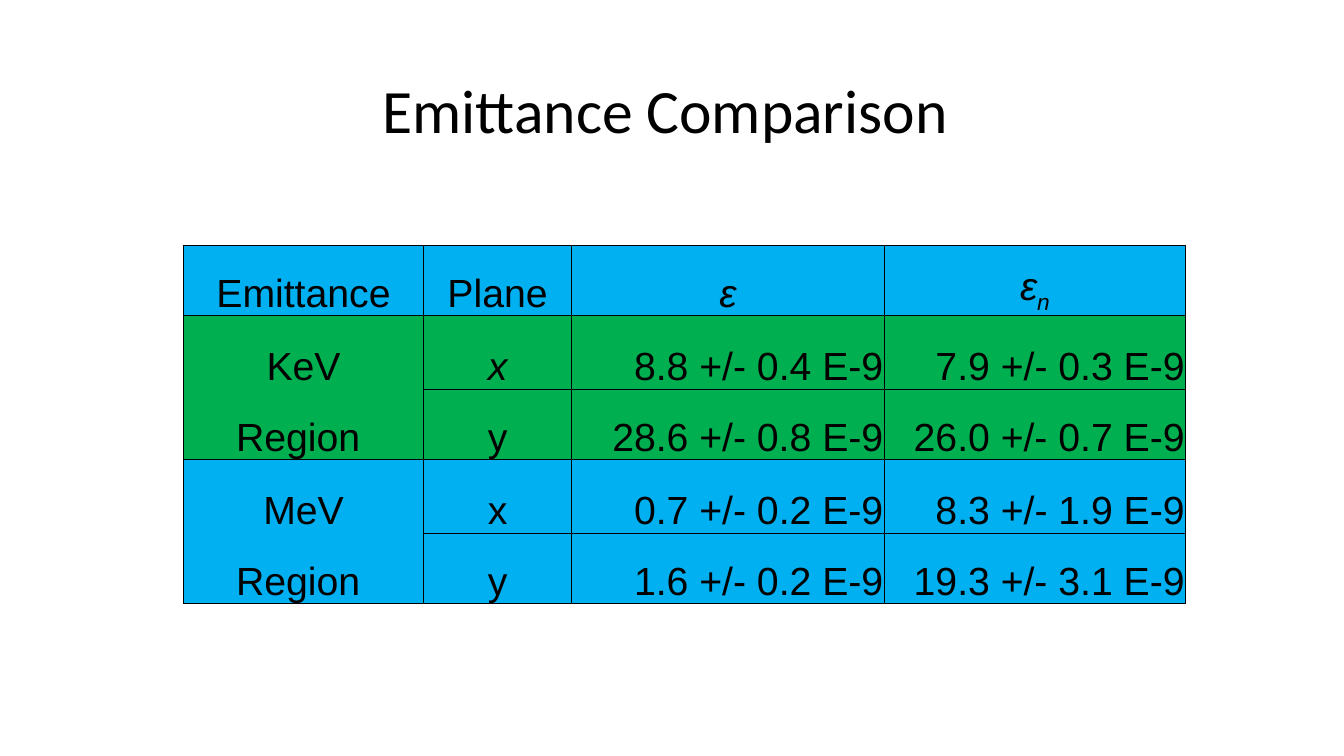
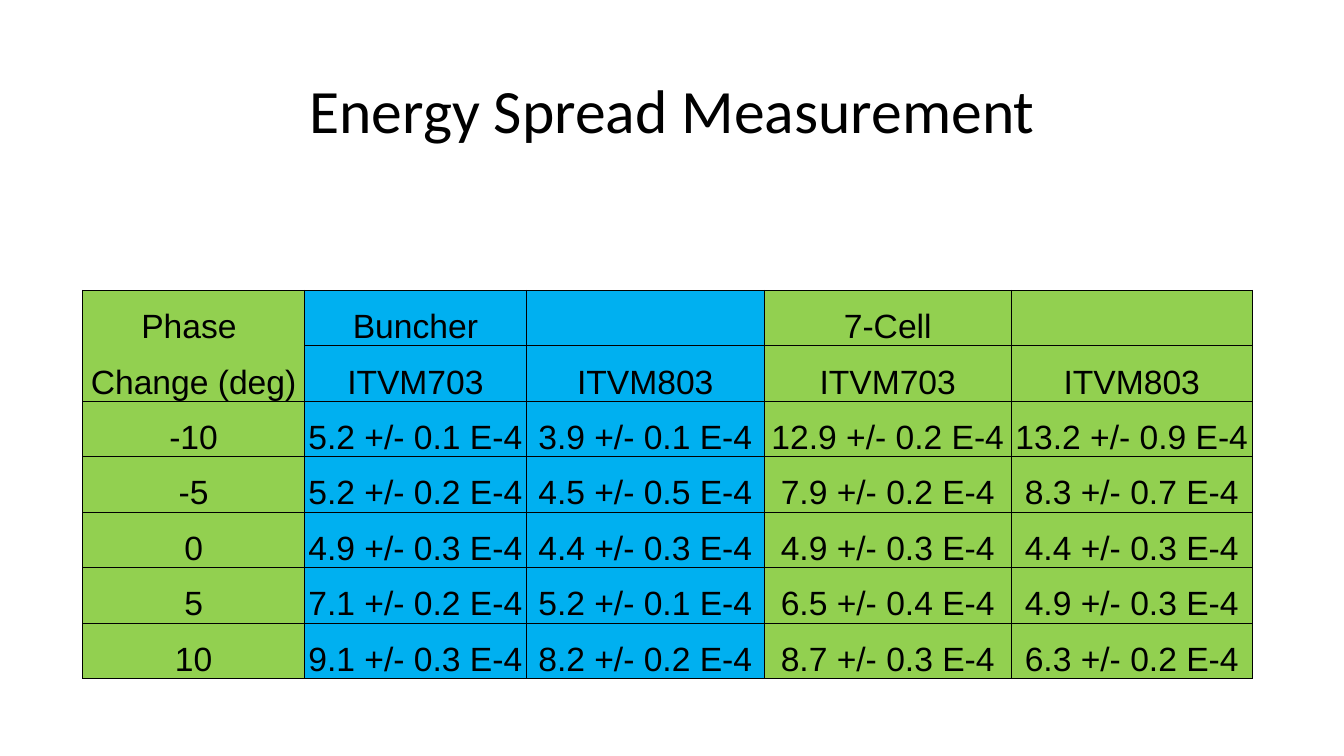
"""Build two slides that compare beam emittance and energy spread in tables."""
from lxml import etree
from pptx import Presentation
from pptx.dml.color import RGBColor
from pptx.enum.text import MSO_ANCHOR, PP_ALIGN
from pptx.oxml.ns import qn
from pptx.util import Inches, Pt

CENTER, RIGHT = PP_ALIGN.CENTER, PP_ALIGN.RIGHT
MIDDLE, BOTTOM = MSO_ANCHOR.MIDDLE, MSO_ANCHOR.BOTTOM
TITLE_ONLY = 5

COLORS = {
    "text": "000000",
    "border": "000000",
    "blue": "00B0F0",
    "green": "00B050",
    "lime": "92D050",
}
TITLE_BOX = (0.92, 0.4, 11.5, 1.45)
CELL_INSET = Inches(0.01)
BORDER_WIDTH = Pt(0.5)

SLIDES = [
    {
        "title": "Emittance Comparison ",
        "origin": (1.82, 2.43),
        "columns": [2.38, 1.47, 3.1, 2.99],
        "row_heights": [0.7, 0.73, 0.7, 0.73, 0.7],
        "size": 28,
        "rows": [
            ["Emittance", "Plane", "ɛ", "ɛ_n"],
            ["KeV", "x", "8.8 +/- 0.4 E-9", "7.9 +/- 0.3 E-9"],
            ["Region ", "y", "28.6 +/- 0.8 E-9", "26.0 +/- 0.7 E-9"],
            ["MeV", "x", "0.7 +/- 0.2 E-9", "8.3 +/- 1.9 E-9"],
            ["Region ", "y", "1.6 +/- 0.2 E-9", "19.3 +/- 3.1 E-9"],
        ],
        "row_fills": ["blue", "green", "green", "blue", "blue"],
        "body_alignment": [CENTER, CENTER, RIGHT, RIGHT],
        "italic": {(0, 2), (0, 3), (1, 1)},
        "label_starts": {1, 3},
    },
    {
        "title": "Energy Spread Measurement",
        "origin": (0.82, 2.88),
        "columns": [2.2, 2.2, 2.36, 2.45, 2.39],
        "row_heights": [0.55] * 7,
        "size": 24,
        "rows": [
            ["Phase ", "Buncher", "", "7-Cell", ""],
            ["Change (deg)", "ITVM703", "ITVM803", "ITVM703", "ITVM803"],
            ["-10", "5.2 +/- 0.1 E-4", "3.9 +/- 0.1 E-4", "12.9 +/- 0.2 E-4", "13.2 +/- 0.9 E-4"],
            ["-5", "5.2 +/- 0.2 E-4", "4.5 +/- 0.5 E-4", "7.9 +/- 0.2 E-4", "8.3 +/- 0.7 E-4"],
            ["0", "4.9 +/- 0.3 E-4", "4.4 +/- 0.3 E-4", "4.9 +/- 0.3 E-4", "4.4 +/- 0.3 E-4"],
            ["5", "7.1 +/- 0.2 E-4", "5.2 +/- 0.1 E-4", "6.5 +/- 0.4 E-4", "4.9 +/- 0.3 E-4"],
            ["10", "9.1 +/- 0.3 E-4", "8.2 +/- 0.2 E-4", "8.7 +/- 0.3 E-4", "6.3 +/- 0.2 E-4"],
        ],
        "column_fills": ["lime", "blue", "blue", "lime", "lime"],
        "body_alignment": [CENTER] * 5,
        "italic": set(),
        "label_starts": {0},
    },
]


def rgb(name):
    return RGBColor.from_string(COLORS[name])


def format_font(font, family, size, italic=False):
    font.name = family
    font.size = Pt(size)
    font.italic = italic
    font.color.rgb = rgb("text")


def add_title(slide, text):
    title = slide.shapes.title
    title.left, title.top, title.width, title.height = map(Inches, TITLE_BOX)
    title.text_frame.text = text
    title.text_frame.vertical_anchor = MIDDLE
    paragraph = title.text_frame.paragraphs[0]
    paragraph.alignment = CENTER
    paragraph.line_spacing = 0.9
    format_font(paragraph.runs[0].font, "Calibri", 44)


def set_borders(cell, open_sides):
    properties = cell._tc.get_or_add_tcPr()
    for side in "LRTB":
        line = etree.SubElement(properties, qn(f"a:ln{side}"), w=str(BORDER_WIDTH))
        if side in open_sides:
            etree.SubElement(line, qn("a:noFill"))
        else:
            fill = etree.SubElement(line, qn("a:solidFill"))
            etree.SubElement(fill, qn("a:srgbClr"), val=COLORS["border"])


def write_cell(cell, text, size, alignment, italic):
    cell.vertical_anchor = BOTTOM
    cell.margin_left = cell.margin_right = cell.margin_top = CELL_INSET
    cell.margin_bottom = 0
    paragraph = cell.text_frame.paragraphs[0]
    paragraph.alignment = alignment
    base, _, subscript = text.partition("_")
    for part in filter(None, (base, subscript)):
        run = paragraph.add_run()
        run.text = part
        format_font(run.font, "Arial", size, italic)
    if subscript:
        run._r.get_or_add_rPr().set("baseline", "-25000")


def add_results(slide, content):
    rows, widths, heights = content["rows"], content["columns"], content["row_heights"]
    frame = (*content["origin"], sum(widths), sum(heights))
    table = slide.shapes.add_table(len(rows), len(widths), *map(Inches, frame)).table
    table.first_row = table.horz_banding = False
    for column, width in zip(table.columns, widths):
        column.width = Inches(width)
    for row, height in zip(table.rows, heights):
        row.height = Inches(height)

    row_fills = content.get("row_fills")
    for r, values in enumerate(rows):
        for c, value in enumerate(values):
            cell = table.cell(r, c)
            open_sides = ""
            if c == 0 and r in content["label_starts"]:
                open_sides = "B"
            elif c == 0 and r - 1 in content["label_starts"]:
                open_sides = "T"
            alignment = content["body_alignment"][c] if r else CENTER
            write_cell(cell, value, content["size"], alignment, (r, c) in content["italic"])
            set_borders(cell, open_sides)
            cell.fill.solid()
            cell.fill.fore_color.rgb = rgb(row_fills[r] if row_fills else content["column_fills"][c])


def main():
    deck = Presentation()
    deck.slide_width, deck.slide_height = Inches(13.33), Inches(7.5)
    for content in SLIDES:
        slide = deck.slides.add_slide(deck.slide_layouts[TITLE_ONLY])
        add_title(slide, content["title"])
        add_results(slide, content)
    deck.save("out.pptx")


if __name__ == "__main__":
    main()
